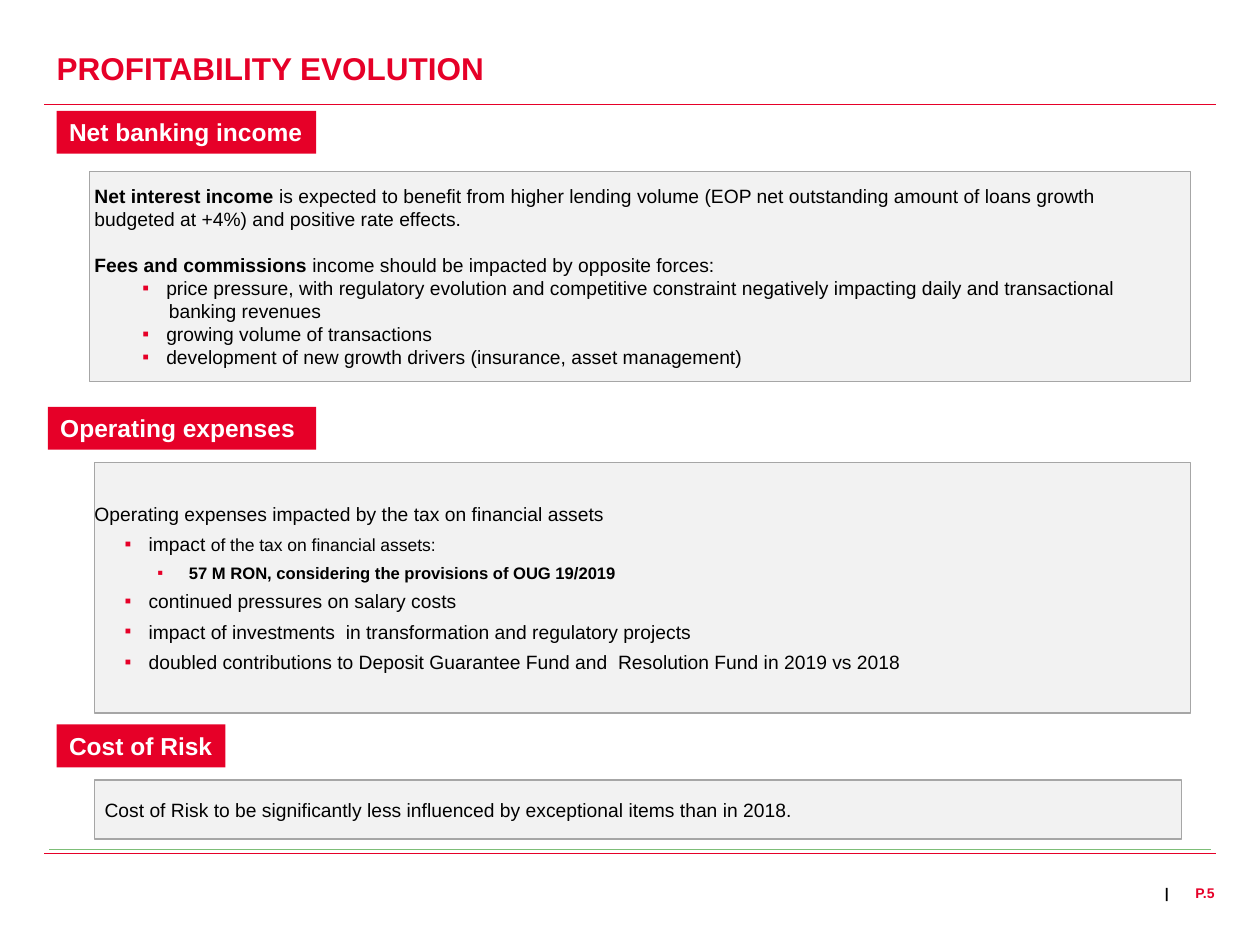
import pptx
import pptx.util
import pptx.dml.color
import pptx.enum.shapes
import pptx.enum.text
import pptx.oxml.xmlchemy

Inches, Pt = pptx.util.Inches, pptx.util.Pt
ALIGN, ANCHOR = pptx.enum.text.PP_ALIGN, pptx.enum.text.MSO_ANCHOR
COLORS = {"red": "E60028", "panel": "F2F2F2", "border": "A6A6A6",
          "green": "7DBE78", "black": "000000", "white": "FFFFFF"}


def rgb(name):
    return pptx.dml.color.RGBColor.from_string(COLORS[name])


def add_element(parent, tag, **attributes):
    child = pptx.oxml.xmlchemy.OxmlElement(tag)
    for key, value in attributes.items():
        child.set(key, value)
    parent.append(child)
    return child


def set_frame(shape, left=0, top=0, right=0, bottom=0, anchor=ANCHOR.TOP):
    frame = shape.text_frame
    values = {"margin_left": Inches(left), "margin_top": Inches(top),
              "margin_right": Inches(right), "margin_bottom": Inches(bottom),
              "vertical_anchor": anchor, "word_wrap": True}
    for key, value in values.items():
        setattr(frame, key, value)
    return frame


def write_paragraph(paragraph, runs, align=ALIGN.LEFT, before=0, after=0,
                    margin=0, indent=0, bullet=False):
    """Each run is (text, size, bold, colour)."""
    values = {"alignment": align, "space_before": Pt(before), "space_after": Pt(after)}
    for key, value in values.items():
        setattr(paragraph, key, value)
    properties = paragraph._p.get_or_add_pPr()
    properties.set("marL", str(Inches(margin)))
    properties.set("indent", str(Inches(indent)))
    if bullet:
        color = add_element(properties, "a:buClr")
        add_element(color, "a:srgbClr", val=COLORS["red"])
        add_element(properties, "a:buFont", typeface="Arial")
        add_element(properties, "a:buChar", char="▪")
    for text, size, bold, color in runs:
        run = paragraph.add_run()
        run.text = text
        for key, value in {"name": "Arial", "size": Pt(size), "bold": bold}.items():
            setattr(run.font, key, value)
        run.font.color.rgb = rgb(color)


def add_rule(slide, left, right, y, color):
    rule = slide.shapes.add_connector(pptx.enum.shapes.MSO_CONNECTOR.STRAIGHT,
                                      Inches(left), Inches(y), Inches(right), Inches(y))
    rule.line.color.rgb = rgb(color)
    rule.line.width = Pt(0.5)
    add_element(rule._element.spPr, "a:effectLst")


def add_label(slide, box, text, size, color, align=ALIGN.LEFT, anchor=ANCHOR.TOP):
    label = slide.shapes.add_textbox(*map(Inches, box))
    frame = set_frame(label, anchor=anchor)
    write_paragraph(frame.paragraphs[0], [(text, size, True, color)], align)


def add_block(slide, box, fill, border=None):
    block = slide.shapes.add_shape(pptx.enum.shapes.MSO_SHAPE.RECTANGLE, *map(Inches, box))
    block.shadow.inherit = False
    block.fill.solid()
    block.fill.fore_color.rgb = rgb(fill)
    if border:
        block.line.color.rgb = rgb(border)
        block.line.width = Pt(0.75)
    else:
        block.line.fill.background()
    return block


def add_section(slide, tag_box, heading, panel_box, inset, paragraphs):
    """A red heading tag above a grey panel of text."""
    panel = add_block(slide, panel_box, "panel", "border")
    frame = set_frame(panel, left=inset, anchor=ANCHOR.MIDDLE)
    for index, (runs, layout) in enumerate(paragraphs):
        paragraph = frame.add_paragraph() if index else frame.paragraphs[0]
        write_paragraph(paragraph, runs, **layout)
    tag = add_block(slide, tag_box, "red")
    tag_frame = set_frame(tag, left=0.1, top=0.05, bottom=0.05)
    write_paragraph(tag_frame.paragraphs[0], [(heading, 14, True, "white")])


def body(text, size=11, bold=False):
    return text, size, bold, "black"


def add_header(slide, left, top):
    add_rule(slide, left - 0.1, left + 9.2, top + 0.44, "red")
    add_label(slide, (left, top, 9.17, 0.3), "PROFITABILITY EVOLUTION", 18, "red",
              anchor=ANCHOR.MIDDLE)


def add_footer(slide, left, top):
    add_rule(slide, left, left + 9.3, top + 0.03, "red")
    add_rule(slide, left + 0.04, left + 9.26, top, "green")
    add_label(slide, (left + 8.87, top + 0.28, 0.08, 0.48), "|", 8, "black", ALIGN.CENTER)
    add_label(slide, (left + 8.9, top + 0.28, 0.39, 0.48), "P.5", 8, "red", ALIGN.RIGHT)


def main():
    deck = pptx.Presentation()
    deck.slide_width, deck.slide_height = Inches(10), Inches(7.5)
    slide = deck.slides.add_slide(deck.slide_layouts[6])
    add_header(slide, 0.45, 0.39)

    # Net banking income
    item = {"margin": 0.57, "indent": -0.19, "bullet": True}
    income = [
        ([body("Net interest income ", bold=True),
          body("is expected to benefit from higher lending volume "
               "(EOP net outstanding amount of loans growth")], {}),
        ([body("budgeted at +4%) and positive rate effects.")], {}),
        ([body("Fees and commissions ", bold=True),
          body("income should be impacted by opposite forces:")], {"before": 13}),
        ([body("price pressure, with regulatory evolution and competitive constraint "
               "negatively impacting daily and transactional")], item),
        ([body("banking revenues")], {"margin": 0.59}),
        ([body("growing volume of transactions")], item),
        ([body("development of new growth drivers (insurance, asset management)")], item),
    ]
    add_section(slide, (0.45, 0.88, 2.06, 0.34), "Net banking income",
                (0.71, 1.36, 8.74, 1.67), 0.04, income)

    # Operating expenses
    spaced = {"after": 4}
    item = {"margin": 0.43, "indent": -0.19, "bullet": True, **spaced}
    sub_item = {**item, "margin": 0.75, "indent": -0.25}
    expenses = [
        ([body("Operating expenses impacted by the tax on financial assets")], spaced),
        ([body("impact "), body("of the tax on financial assets:", 10)], item),
        ([body("57 M RON, considering the provisions of OUG 19/2019", 9.5, True)], sub_item),
        ([body("continued pressures on salary costs")], item),
        ([body("impact of investments  in transformation and regulatory projects")], item),
        ([body("doubled contributions to Deposit Guarantee Fund and  "
               "Resolution Fund in 2019 vs 2018")], item),
    ]
    add_section(slide, (0.38, 3.23, 2.13, 0.34), "Operating expenses",
                (0.75, 3.67, 8.7, 1.99), 0, expenses)

    # Cost of risk
    risk = [([body("Cost of Risk to be significantly less influenced "
                   "by exceptional items than in 2018.")], {})]
    add_section(slide, (0.45, 5.75, 1.34, 0.34), "Cost of Risk",
                (0.75, 6.19, 8.63, 0.47), 0.08, risk)

    add_footer(slide, 0.35, 6.74)
    deck.save("out.pptx")


if __name__ == "__main__":
    main()
